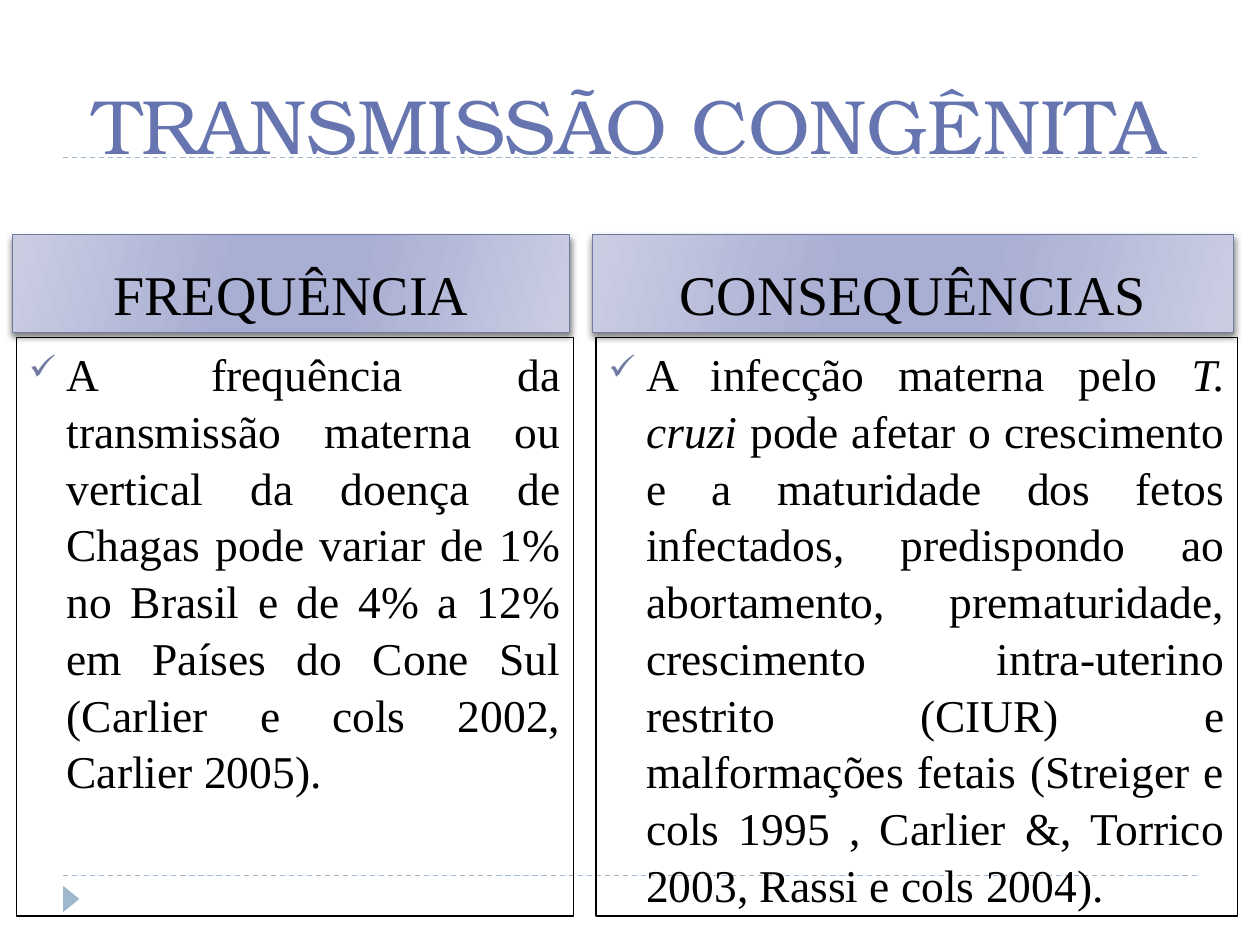
from dataclasses import dataclass

from lxml.etree import SubElement
from pptx import Presentation
from pptx.dml.color import RGBColor
from pptx.enum.dml import MSO_LINE
from pptx.enum.shapes import MSO_CONNECTOR, MSO_SHAPE
from pptx.enum.text import MSO_ANCHOR, PP_ALIGN
from pptx.oxml.ns import qn
from pptx.util import Inches, Pt

WIDTH, HEIGHT = 10, 7.5
MARGIN = 0.05 * WIDTH
RULE_ROWS = (1.25, 6.95)
HEADER_TOP, HEADER_HEIGHT = 1.86, 0.78
BODY_TOP, BODY_HEIGHT = 2.68, 4.59
BODY_SHIFT = 0.03
INDENT = 0.3
SERIF, TITLE_FONT = "Times New Roman", "TeX Gyre Bonum"
BLACK, ACCENT, PALE, TITLE_COLOR = "000000", "727CA3", "9FB8CD", "6675AF"
GRADIENT = ((0, "CACDE2"), (40, "A9AED3"), (60, "A9AED3"), (100, "CACDE2"))


@dataclass
class TextRun:
    text: str
    italic: bool = False


@dataclass
class Column:
    left: float
    width: float
    heading: str
    runs: list[TextRun]


COLUMNS = [
    Column(0.1, 4.42, "FREQUÊNCIA", [
        TextRun("A frequência da transmissão materna ou vertical da doença de Chagas "
                "pode variar de 1% no Brasil e de 4% a 12% em Países do Cone Sul "
                "(Carlier e cols 2002, Carlier 2005)."),
    ]),
    Column(4.7, 5.09, "CONSEQUÊNCIAS", [
        TextRun("A infecção materna pelo "),
        TextRun("T. cruzi", italic=True),
        TextRun(" pode afetar o crescimento e a maturidade dos fetos infectados, "
                "predispondo ao abortamento, prematuridade, crescimento intra-uterino "
                "restrito (CIUR) e malformações fetais (Streiger e cols 1995 , "
                "Carlier &, Torrico 2003, Rassi e cols 2004)."),
    ]),
]


def color(value: str) -> RGBColor:
    return RGBColor.from_string(value)


def add_run(paragraph, run: TextRun, size: float, font: str, value: str) -> None:
    item = paragraph.add_run()
    item.text = run.text
    item.font.size = Pt(size)
    item.font.name = font
    item.font.italic = run.italic
    item.font.color.rgb = color(value)


def add_rule(slide, top: float) -> None:
    line = slide.shapes.add_connector(
        MSO_CONNECTOR.STRAIGHT, Inches(MARGIN), Inches(top),
        Inches(WIDTH - MARGIN), Inches(top))
    line.line.color.rgb = color(PALE)
    line.line.width = Pt(0.75)
    line.line.dash_style = MSO_LINE.DASH
    SubElement(line._element.spPr, qn("a:effectLst"))


def add_marker(slide) -> None:
    marker = slide.shapes.add_shape(
        MSO_SHAPE.ISOSCELES_TRIANGLE, Inches(0.46), Inches(7.07), Inches(0.21), Inches(0.13))
    marker.rotation = 90
    marker.shadow.inherit = False
    marker.fill.solid()
    marker.fill.fore_color.rgb = color(PALE)
    marker.line.fill.background()


def add_box(slide, left: float, top: float, width: float, height: float,
            border: str, anchor: MSO_ANCHOR):
    shape = slide.shapes.add_shape(
        MSO_SHAPE.RECTANGLE, Inches(left), Inches(top), Inches(width), Inches(height))
    shape.shadow.inherit = False
    shape.fill.background()
    shape.line.color.rgb = color(border)
    shape.line.width = Pt(0.75)
    shape.text_frame.word_wrap = True
    shape.text_frame.vertical_anchor = anchor
    return shape


def add_gradient(shape) -> None:
    shape.fill.gradient()
    shape.fill.gradient_angle = 345
    stops = shape.fill._fill._gradFill.find(qn("a:gsLst"))
    for stop in list(stops):
        stops.remove(stop)
    for position, value in GRADIENT:
        stop = SubElement(stops, qn("a:gs"), pos=str(position * 1000))
        SubElement(stop, qn("a:srgbClr"), val=value)


def add_shadow(shape) -> None:
    effects = shape._element.spPr.find(qn("a:effectLst"))
    shadow = SubElement(effects, qn("a:outerShdw"), blurRad=str(Pt(4)), dist=str(Pt(2)),
                        dir="5400000", rotWithShape="0")
    shade = SubElement(shadow, qn("a:srgbClr"), val=BLACK)
    SubElement(shade, qn("a:alpha"), val="50000")


def add_check_bullet(paragraph) -> None:
    properties = paragraph._p.get_or_add_pPr()
    properties.set("marL", str(Inches(INDENT)))
    properties.set("indent", str(-Inches(INDENT)))
    bullet_color = SubElement(properties, qn("a:buClr"))
    SubElement(bullet_color, qn("a:srgbClr"), val=ACCENT)
    SubElement(properties, qn("a:buSzPct"), val="76000")
    SubElement(properties, qn("a:buChar"), char="✓")


def add_column(slide, column: Column) -> None:
    header = add_box(slide, column.left, HEADER_TOP, column.width, HEADER_HEIGHT,
                     ACCENT, MSO_ANCHOR.BOTTOM)
    add_gradient(header)
    add_shadow(header)
    paragraph = header.text_frame.paragraphs[0]
    paragraph.alignment = PP_ALIGN.CENTER
    add_run(paragraph, TextRun(column.heading), 32, SERIF, BLACK)

    body = add_box(slide, column.left + BODY_SHIFT, BODY_TOP, column.width, BODY_HEIGHT,
                   BLACK, MSO_ANCHOR.TOP)
    paragraph = body.text_frame.paragraphs[0]
    paragraph.alignment = PP_ALIGN.JUSTIFY
    paragraph.line_spacing = 1.04
    add_check_bullet(paragraph)
    for run in column.runs:
        add_run(paragraph, run, 26, SERIF, BLACK)


def format_title(title) -> None:
    title.left, title.top = Inches(MARGIN), Inches(0.48)
    title.width, title.height = Inches(WIDTH - 2 * MARGIN), Inches(1)
    title.text_frame.word_wrap = True
    title.text_frame.vertical_anchor = MSO_ANCHOR.MIDDLE
    paragraph = title.text_frame.paragraphs[0]
    paragraph.alignment = PP_ALIGN.CENTER
    add_run(paragraph, TextRun("TRANSMISSÃO CONGÊNITA"), 44, TITLE_FONT, TITLE_COLOR)


def main() -> None:
    presentation = Presentation()
    presentation.slide_width, presentation.slide_height = Inches(WIDTH), Inches(HEIGHT)
    slide = presentation.slides.add_slide(presentation.slide_layouts[5])
    format_title(slide.shapes.title)
    for top in RULE_ROWS:
        add_rule(slide, top)
    add_marker(slide)
    for column in COLUMNS:
        add_column(slide, column)
    presentation.save("out.pptx")


if __name__ == "__main__":
    main()
